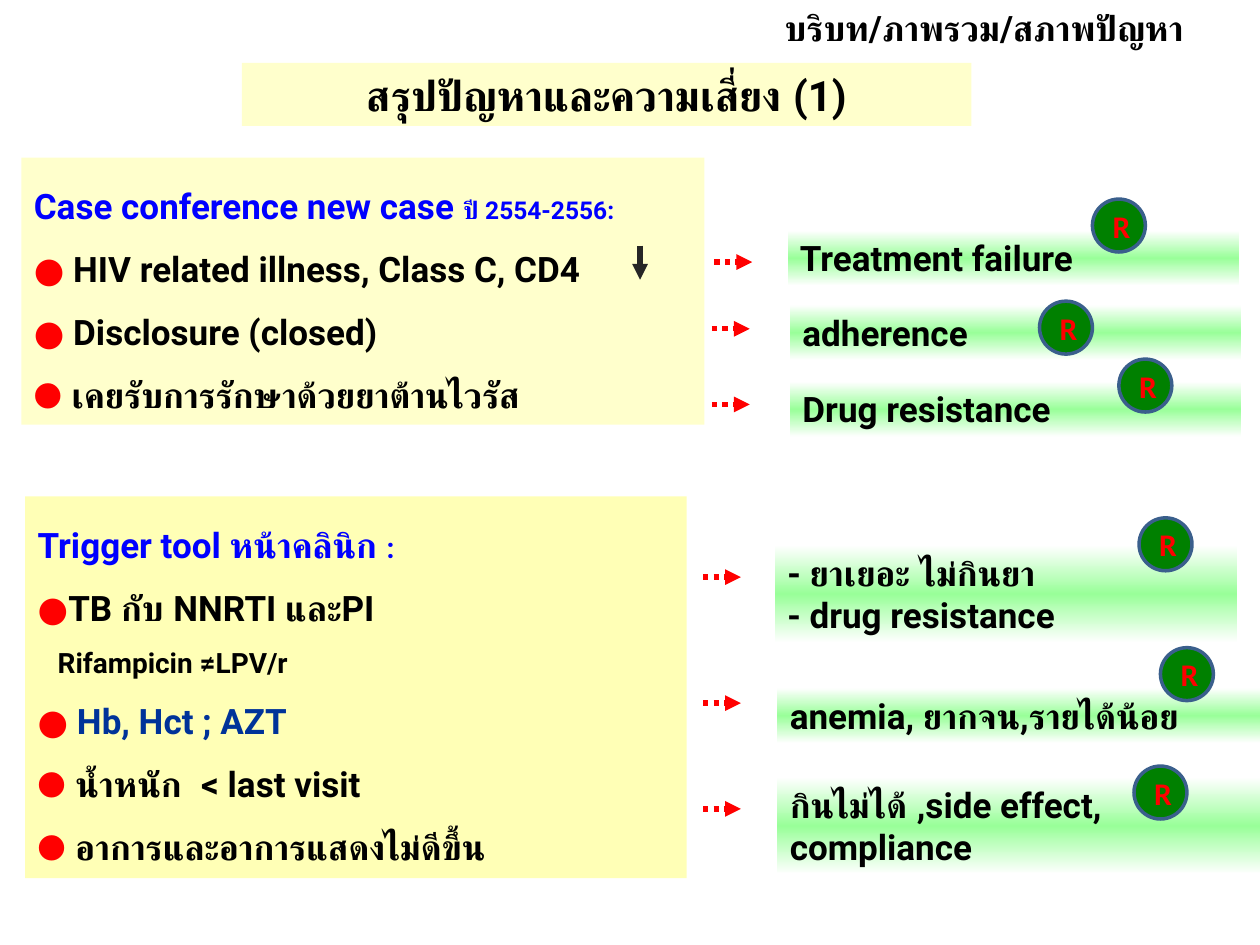
from copy import deepcopy

from pptx import Presentation
from pptx.dml.color import RGBColor
from pptx.enum.dml import MSO_LINE_DASH_STYLE as Dash
from pptx.enum.shapes import MSO_CONNECTOR as Connector, MSO_SHAPE as Shape
from pptx.enum.text import MSO_ANCHOR as Anchor, MSO_AUTO_SIZE as AutoSize, PP_ALIGN as Align
from pptx.oxml.ns import qn
from pptx.util import Inches, Pt

color = RGBColor.from_string
BLACK, BLUE, RED, NAVY = "000000", "0000FF", "FF0000", "003399"
BULLET = ("● ", 20, RED)

presentation = Presentation()
presentation.slide_width, presentation.slide_height = Inches(10), Inches(7.5)
slide = presentation.slides.add_slide(presentation.slide_layouts[6])


def add_box(place, lines, kind=Shape.RECTANGLE, font_name="Roboto", paragraph_format=None, **frame_format):
    """Add a shape; each line is a list of (text, size, colour) runs."""
    shape = slide.shapes.add_shape(kind, *map(Inches, place))
    shape.shadow.inherit = False
    shape.fill.background()
    shape.line.fill.background()
    frame = shape.text_frame
    frame_values = {"word_wrap": True, "vertical_anchor": Anchor.TOP, "auto_size": AutoSize.SHAPE_TO_FIT_TEXT}
    for name, value in (frame_values | frame_format).items():
        setattr(frame, name, value)
    for index, line in enumerate(lines):
        paragraph = frame.add_paragraph() if index else frame.paragraphs[0]
        for name, value in ({"alignment": Align.LEFT} | (paragraph_format or {})).items():
            setattr(paragraph, name, value)
        for text, size, hex_color in line:
            run = paragraph.add_run()
            run.text = text
            for name, value in {"name": font_name, "size": Pt(size), "bold": True}.items():
                setattr(run.font, name, value)
            run.font.color.rgb = color(hex_color)
    return shape


def add_arrow(start, end, hex_color, dash=None):
    arrow = slide.shapes.add_connector(Connector.STRAIGHT, *map(Inches, start + end))
    for name, value in {"width": Pt(3), "dash_style": dash}.items():
        setattr(arrow.line, name, value)
    arrow.line.color.rgb = color(hex_color)
    line_element = arrow.line._get_or_add_ln()
    line_element.append(line_element.makeelement(qn("a:tailEnd"), {"type": "triangle"}))
    properties = arrow.element.spPr
    properties.append(properties.makeelement(qn("a:effectLst"), {}))


# Headings
add_box((6.13, 0, 3.87, 0.44), [[("บริบท/ภาพรวม/สภาพปัญหา", 20, BLACK)]])
title = add_box((1.92, 0.5, 5.79, 0.5), [[("สรุปปัญหาและความเสี่ยง (1)", 24, BLACK)]],
                paragraph_format={"alignment": Align.CENTER})
title.fill.solid()
title.fill.fore_color.rgb = color("FFFFCC")

# Case conference panel
conference = add_box((0.17, 1.25, 5.42, 2.12), [
    [("Case conference new case ", 20, BLUE), ("ปี 2554-2556:", 14, BLUE)],
    [("●", 20, RED), (" HIV related illness, Class C, CD4", 20, BLACK)],
    [BULLET, ("Disclosure (closed)", 20, BLACK)],
    [BULLET, ("เคยรับการรักษาด้วยยาต้านไวรัส", 20, BLACK)],
], paragraph_format={"line_spacing": 1.5})
conference.fill.solid()
conference.fill.fore_color.rgb = color("FFFFCC")
for paragraph in conference.text_frame.paragraphs:
    paragraph_properties = paragraph._p.get_or_add_pPr()
    paragraph_properties.set("marL", str(Inches(0.5)))
    paragraph_properties.set("indent", str(Inches(-0.5)))

# Trigger tool panel
trigger = add_box((0.2, 3.94, 5.25, 3.03), [
    [("Trigger tool หน้าคลินิก ", 20, BLUE), (":", 16, BLUE)],
    [("●", 20, RED), ("TB กับ NNRTI และPI", 20, BLACK)],
    [("Rifampicin ≠LPV/r", 16, BLACK)],
    [BULLET, ("Hb, Hct ; AZT", 20, NAVY)],
    [BULLET, ("น้ำหนัก  < last visit", 20, BLACK)],
    [BULLET, ("อาการและอาการแสดงไม่ดีขึ้น", 20, BLACK)],
], paragraph_format={"line_spacing": 1.5})
trigger.fill.solid()
trigger.fill.fore_color.rgb = color("FFFF99")
panel_color = trigger.element.spPr.find(qn("a:solidFill"))[0]
panel_color.append(panel_color.makeelement(qn("a:alpha"), {"val": "71000"}))
trigger.text_frame.paragraphs[2]._p.get_or_add_pPr().set("marL", str(Inches(0.16)))

# Risks with a green glow
risks = [
    ((6.25, 1.83, 3.58, 0.44), ["Treatment failure"]),
    ((6.27, 2.42, 3.58, 0.44), ["adherence"]),
    ((6.27, 3.03, 3.58, 0.44), ["Drug resistance"]),
    ((6.15, 4.33, 3.67, 0.77), ["- ยาเยอะ ไม่กินยา", "- drug resistance"]),
    ((6.17, 5.46, 3.83, 0.44), ["anemia, ยากจน,รายได้น้อย"]),
    ((6.17, 6.17, 3.83, 0.77), ["กินไม่ได้ ,side effect, compliance"]),
]
for place, texts in risks:
    risk = add_box(place, [[(text, 20, BLACK)] for text in texts])
    risk.fill.gradient()
    risk.fill.gradient_angle = 90
    stop_list = risk.element.spPr.find(qn("a:gradFill")).find(qn("a:gsLst"))
    stop_list.insert(1, deepcopy(stop_list[0]))
    for stop, position, hex_color in zip(risk.fill.gradient_stops, (0, 0.5, 1), ("FFFFFF", "99FF99", "FFFFFF")):
        stop.position = position
        stop.color.rgb = color(hex_color)

# Dotted arrows from problems to risks
for left, top in [(5.67, 2.08), (5.65, 2.61), (5.65, 3.21), (5.58, 4.58), (5.58, 5.58), (5.58, 6.42)]:
    add_arrow((left, top), (left + 0.3, top), RED, Dash.ROUND_DOT)

# Risk badges
for left, top in [(8.67, 1.58), (8.25, 2.39), (9, 6.08), (9.21, 5.14), (9.04, 4.11), (8.88, 2.85)]:
    badge = add_box((left, top, 0.42, 0.42), [[("R", 18, RED)]], Shape.OVAL, "Calibri",
                    {"alignment": Align.CENTER}, vertical_anchor=Anchor.MIDDLE, auto_size=AutoSize.NONE)
    badge.fill.solid()
    badge.fill.fore_color.rgb = color("008000")
    badge.line.color.rgb = color("3A5F8C")
    badge.line.width = Pt(2)

# Falling CD4 count
add_arrow((5.08, 1.95), (5.08, 2.22), "262626")

presentation.save("out.pptx")
